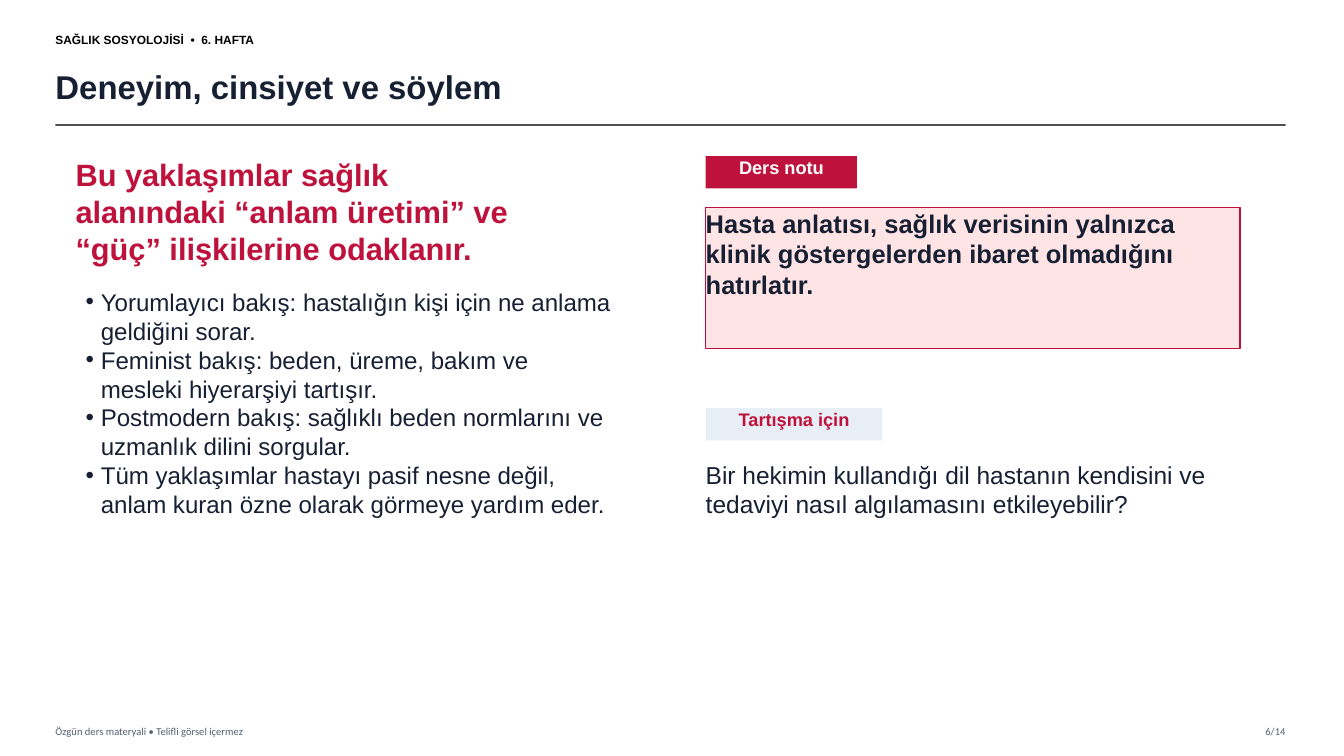
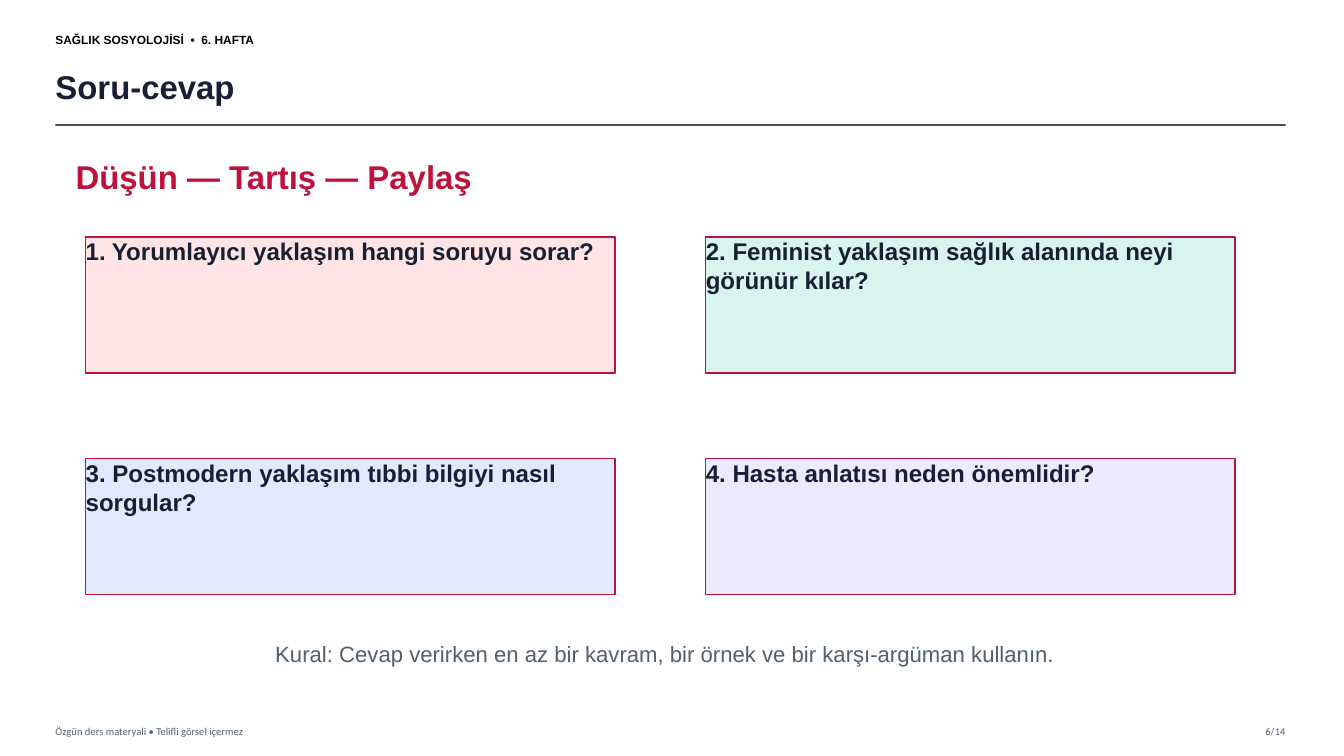
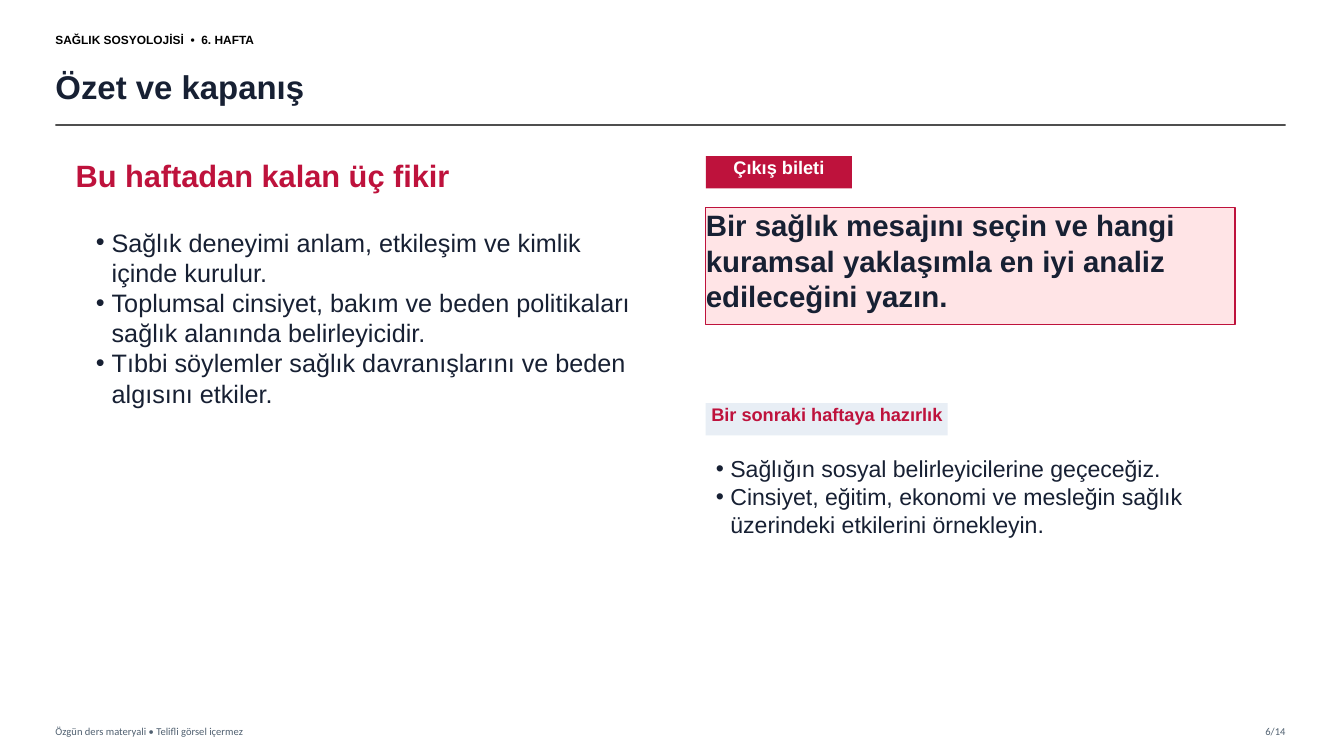
"""Builds three lecture slides on health sociology."""
from dataclasses import dataclass

from lxml import etree
from pptx import Presentation
from pptx import util as u
from pptx.dml.color import RGBColor
from pptx.enum import shapes, text
from pptx.oxml.ns import qn


@dataclass(frozen=True)
class Style:
    """Type size, colour, weight and face of a text."""
    size: float
    color: str
    bold: bool = False
    face: str = "Arial"


@dataclass(frozen=True)
class Box:
    """A rectangle in inches."""
    left: float
    top: float
    width: float
    height: float

    def emu(self):
        """Return the four lengths for python-pptx."""
        return [u.Inches(n) for n in (self.left, self.top, self.width, self.height)]


class Theme:
    """Colours, text styles and measures shared by the slides."""
    ink, crimson, slate, white = "172033", "BE123C", "506070", "FFFFFF"
    rose, mint, sky, lilac, mist = "FFE4E6", "D9F3EE", "DFEAFE", "EDE9FE", "E8EEF5"
    rule = "333333"
    course = Style(8.5, "000000", True)
    title = Style(23.5, ink, True)
    footer = Style(7.5, slate, face="Calibri")
    lead = Style(22, crimson, True)
    motto = Style(23.5, crimson, True)
    note = Style(18.2, ink, True)
    ticket = Style(21, ink, True)
    question = Style(17.2, ink, True)
    points = Style(17.2, ink)
    summary = Style(18, ink)
    discussion = Style(17.5, ink)
    preparation = Style(16.5, ink)
    guideline = Style(15.8, slate)
    tag_dark = Style(13, white, True)
    tag_light = Style(13, crimson, True)
    margin, right = 0.55, 12.75
    tag_height, tag_step = 0.32, 0.51
    bullet_em = 0.63


LEFT, CENTER, RIGHT = (text.PP_ALIGN.LEFT, text.PP_ALIGN.CENTER, text.PP_ALIGN.RIGHT)
TOP, MIDDLE = text.MSO_ANCHOR.TOP, text.MSO_ANCHOR.MIDDLE


def rgb(color):
    """Turn a hex string into a colour."""
    return RGBColor.from_string(color)


def add_bullet(paragraph, size):
    """Give a paragraph a hanging round bullet."""
    indent = u.Pt(round(size * Theme.bullet_em, 2))
    properties = paragraph._p.get_or_add_pPr()
    properties.set("marL", str(indent))
    properties.set("indent", str(-indent))
    etree.SubElement(properties, qn("a:buFont"), typeface="Arial")
    etree.SubElement(properties, qn("a:buChar"), char="•")


def write(shape, lines, style, align=LEFT, anchor=TOP, bullets=False):
    """Fill a shape with paragraphs in one style, without insets."""
    frame = shape.text_frame
    frame.text = "\n".join(lines)
    frame.word_wrap = True
    frame.auto_size = text.MSO_AUTO_SIZE.NONE
    frame.vertical_anchor = anchor
    frame.margin_left = frame.margin_right = frame.margin_top = frame.margin_bottom = 0
    for paragraph in frame.paragraphs:
        paragraph.alignment = align
        paragraph.space_before = u.Pt(0)
        if bullets:
            add_bullet(paragraph, style.size)
        for run in paragraph.runs:
            run.font.size = u.Pt(style.size)
            run.font.name = style.face
            run.font.bold = style.bold
            run.font.color.rgb = rgb(style.color)


def add_label(slide, box, line, style, **layout):
    """Place a line of free text."""
    write(slide.shapes.add_textbox(*box.emu()), [line], style, **layout)


def add_panel(slide, box, line, style, fill, border=None, align=LEFT):
    """Place a filled rectangle holding text."""
    panel = slide.shapes.add_shape(shapes.MSO_SHAPE.RECTANGLE, *box.emu())
    panel.shadow.inherit = False
    panel.fill.solid()
    panel.fill.fore_color.rgb = rgb(fill)
    if border:
        panel.line.color.rgb = rgb(border)
        panel.line.width = u.Pt(1)
    else:
        panel.line.fill.background()
    write(panel, [line], style, align)


def fill_placeholder(placeholder, box, lines, style, **layout):
    """Move a template placeholder and fill it."""
    placeholder.left, placeholder.top, placeholder.width, placeholder.height = box.emu()
    write(placeholder, lines, style, **layout)


def add_rule(slide, top):
    """Draw the line below the title."""
    rule = slide.shapes.add_connector(
        shapes.MSO_CONNECTOR.STRAIGHT, u.Inches(Theme.margin), u.Inches(top),
        u.Inches(Theme.right), u.Inches(top))
    rule.line.color.rgb = rgb(Theme.rule)
    rule.line.width = u.Pt(1.2)
    color = rule.line._ln.find(".//" + qn("a:srgbClr"))
    etree.SubElement(color, qn("a:alpha"), val="85000")
    etree.SubElement(rule._element.spPr, qn("a:effectLst"))


def start_slide(deck, layout, title):
    """Add a slide with the shared header and footer."""
    slide = deck.slides.add_slide(deck.slide_layouts.get_by_name(layout))
    add_label(slide, Box(Theme.margin, 0.25, 3.6, 0.28),
              "SAĞLIK SOSYOLOJİSİ  •  6. HAFTA", Theme.course, anchor=MIDDLE)
    fill_placeholder(slide.shapes.title, Box(Theme.margin, 0.58, 11.95, 0.55),
                     [title], Theme.title, anchor=MIDDLE)
    add_rule(slide, 1.24)
    add_label(slide, Box(Theme.margin, 7.14, 6, 0.22),
              "Özgün ders materyali • Telifli görsel içermez", Theme.footer, anchor=MIDDLE)
    add_label(slide, Box(Theme.right - 0.65, 7.14, 0.65, 0.22),
              "6/14", Theme.footer, align=RIGHT, anchor=MIDDLE)
    return slide


def add_tag(slide, box, label, width, style, fill):
    """Place a tag on top of a region and return the box left below it."""
    add_panel(slide, Box(box.left, box.top, width, Theme.tag_height),
              label, style, fill, align=CENTER)
    return Box(box.left, box.top + Theme.tag_step, box.width, box.height - Theme.tag_step)


def add_callout(slide, box, label, width, line, style):
    """Place a dark tag above a rose card."""
    card = add_tag(slide, box, label, width, Theme.tag_dark, Theme.crimson)
    add_panel(slide, card, line, style, Theme.rose, Theme.crimson)


def add_question_grid(slide, box, questions, columns=2, gap_x=0.9, gap_y=0.85):
    """Lay numbered question cards out in an even grid."""
    rows = -(-len(questions) // columns)
    width = (box.width - gap_x * (columns - 1)) / columns
    height = (box.height - gap_y * (rows - 1)) / rows
    for index, (question, fill) in enumerate(questions):
        row, column = divmod(index, columns)
        cell = Box(box.left + column * (width + gap_x),
                   box.top + row * (height + gap_y), width, height)
        add_panel(slide, cell, f"{index + 1}. {question}", Theme.question,
                  fill, Theme.crimson)


def build_experience(deck):
    """Build the slide on experience, gender and discourse."""
    slide = start_slide(deck, "Title and Content", "Deneyim, cinsiyet ve söylem")
    add_label(slide, Box(0.75, 1.55, 4.6, 1),
              "Bu yaklaşımlar sağlık alanındaki “anlam üretimi” ve “güç” ilişkilerine odaklanır.",
              Theme.lead)
    fill_placeholder(slide.placeholders[1], Box(0.85, 2.85, 5.25, 2.7), [
        "Yorumlayıcı bakış: hastalığın kişi için ne anlama geldiğini sorar.",
        "Feminist bakış: beden, üreme, bakım ve mesleki hiyerarşiyi tartışır.",
        "Postmodern bakış: sağlıklı beden normlarını ve uzmanlık dilini sorgular.",
        "Tüm yaklaşımlar hastayı pasif nesne değil, anlam kuran özne olarak görmeye yardım eder.",
    ], Theme.points, bullets=True)
    add_callout(slide, Box(7, 1.55, 5.3, 1.91), "Ders notu", 1.5,
                "Hasta anlatısı, sağlık verisinin yalnızca klinik göstergelerden "
                "ibaret olmadığını hatırlatır.", Theme.note)
    prompt = add_tag(slide, Box(7, 4.05, 5.3, 1.75), "Tartışma için", 1.75,
                     Theme.tag_light, Theme.mist)
    add_label(slide, prompt,
              "Bir hekimin kullandığı dil hastanın kendisini ve tedaviyi nasıl "
              "algılamasını etkileyebilir?", Theme.discussion)


def build_questions(deck):
    """Build the question and answer slide."""
    slide = start_slide(deck, "Title Only", "Soru-cevap")
    add_label(slide, Box(0.75, 1.55, 5.7, 0.5), "Düşün — Tartış — Paylaş", Theme.motto)
    add_question_grid(slide, Box(0.85, 2.35, 11.4, 3.55), [
        ("Yorumlayıcı yaklaşım hangi soruyu sorar?", Theme.rose),
        ("Feminist yaklaşım sağlık alanında neyi görünür kılar?", Theme.mint),
        ("Postmodern yaklaşım tıbbi bilgiyi nasıl sorgular?", Theme.sky),
        ("Hasta anlatısı neden önemlidir?", Theme.lilac),
    ])
    add_label(slide, Box(1, 6.35, 11.2, 0.35),
              "Kural: Cevap verirken en az bir kavram, bir örnek ve bir karşı-argüman kullanın.",
              Theme.guideline, align=CENTER)


def build_summary(deck):
    """Build the closing slide."""
    slide = start_slide(deck, "Two Content", "Özet ve kapanış")
    add_label(slide, Box(0.75, 1.55, 5.4, 0.45), "Bu haftadan kalan üç fikir", Theme.lead)
    fill_placeholder(slide.placeholders[1], Box(0.95, 2.25, 5.5, 2.4), [
        "Sağlık deneyimi anlam, etkileşim ve kimlik içinde kurulur.",
        "Toplumsal cinsiyet, bakım ve beden politikaları sağlık alanında belirleyicidir.",
        "Tıbbi söylemler sağlık davranışlarını ve beden algısını etkiler.",
    ], Theme.summary, bullets=True)
    add_callout(slide, Box(7, 1.55, 5.25, 1.67), "Çıkış bileti", 1.45,
                "Bir sağlık mesajını seçin ve hangi kuramsal yaklaşımla en iyi "
                "analiz edileceğini yazın.", Theme.ticket)
    below = add_tag(slide, Box(7, 4, 5.3, 1.85), "Bir sonraki haftaya hazırlık", 2.4,
                    Theme.tag_light, Theme.mist)
    fill_placeholder(slide.placeholders[2],
                     Box(below.left + 0.1, below.top, below.width - 0.1, below.height), [
        "Sağlığın sosyal belirleyicilerine geçeceğiz.",
        "Cinsiyet, eğitim, ekonomi ve mesleğin sağlık üzerindeki etkilerini örnekleyin.",
    ], Theme.preparation, bullets=True)


def main():
    """Build and save the deck."""
    deck = Presentation()
    deck.slide_width, deck.slide_height = u.Inches(13.33), u.Inches(7.5)
    for build in (build_experience, build_questions, build_summary):
        build(deck)
    deck.save("out.pptx")


if __name__ == "__main__":
    main()
